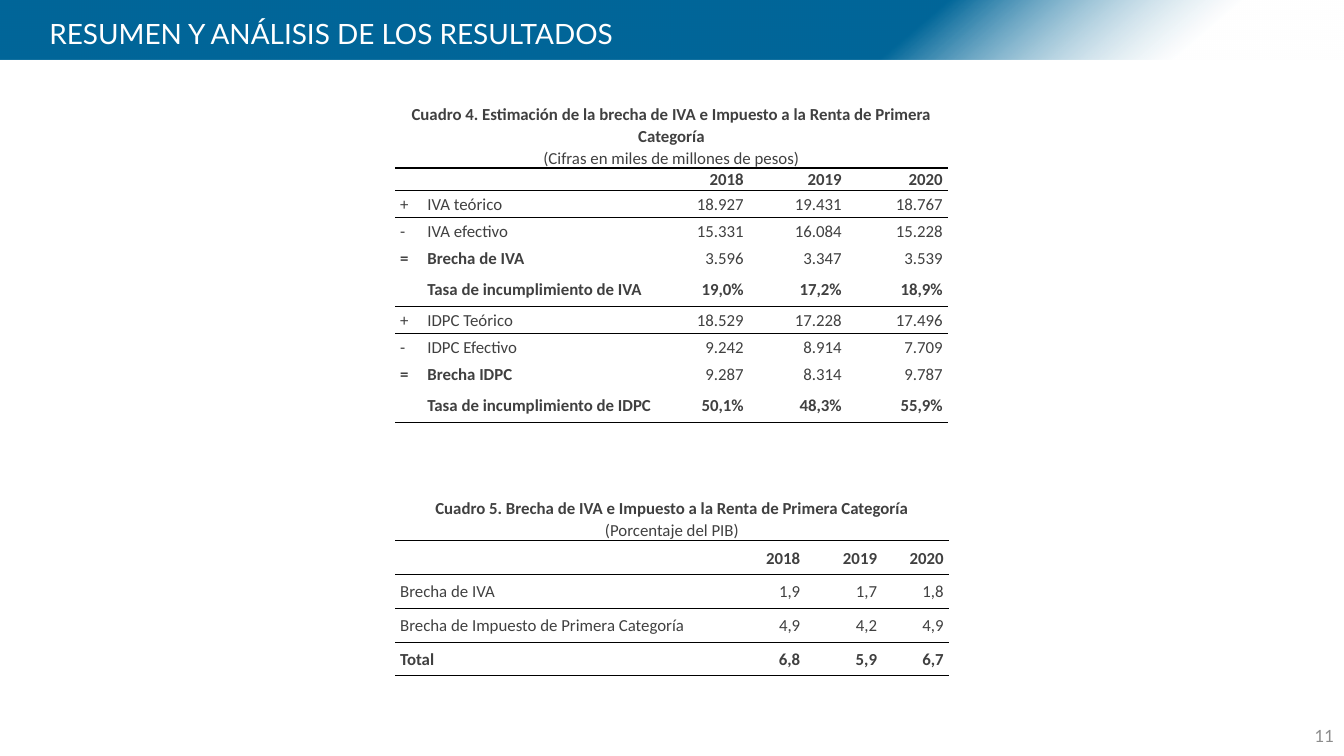
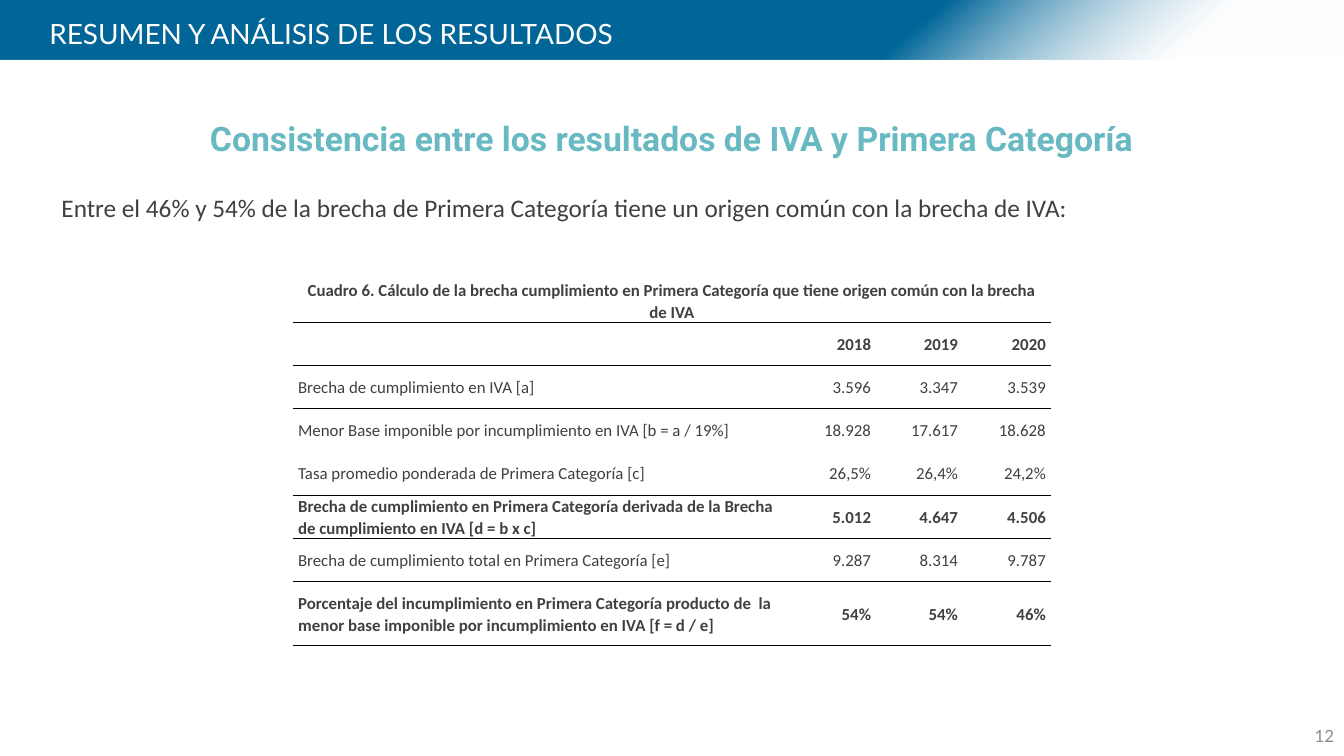
"""Build two slides of tax gap results with their tables."""
from pptx import Presentation
from pptx.dml.color import RGBColor
from pptx.enum.shapes import MSO_SHAPE as Preset
from pptx.enum.text import MSO_ANCHOR as Anchor, PP_ALIGN as Align
from pptx.oxml.ns import qn
from pptx.oxml.xmlchemy import OxmlElement
from pptx.util import Pt

PX = 9144
WIDTH, HEIGHT = 1330, 748
COLORS = {"band": "006699", "white": "FFFFFF", "text": "404040",
          "number": "8C8C8C", "heading": "68B9C1", "rule": "000000"}
FORMATS = {
    "title": {"name": "Lato", "size": Pt(19.9), "color": "white"},
    "number": {"name": "Lato", "size": Pt(12), "color": "number"},
    "heading": {"name": "Roboto", "size": Pt(24), "color": "heading", "bold": True},
    "body": {"name": "Calibri", "size": Pt(18), "color": "text"},
    "cell": {"name": "Calibri", "size": Pt(12), "color": "text", "bold": False},
    "strong": {"name": "Calibri", "size": Pt(12), "color": "text", "bold": True},
}
NO_GRID_STYLE = "{2D5ABB26-0587-4C30-8999-92F81FD0307C}"
TITLE = "RESUMEN Y ANÁLISIS DE LOS RESULTADOS"
YEARS = ["2018", "2019", "2020"]

GAP_TABLE = {
    "at": (391, 102),
    "columns": [27, 245, 78, 97, 100],
    "heights": [64, 22] + [27, 27, 27, 34] * 2,
    "caption": ["Cuadro 4. Estimación de la brecha de IVA e Impuesto a la Renta "
                "de Primera Categoría", "(Cifras en miles de millones de pesos)"],
    "anchor": Anchor.BOTTOM,
    "ruled": {0, 1, 5, 9},
    "rows": [
        ("strong", "strong", ["", "", *YEARS]),
        ("cell", "cell", ["+", "IVA teórico", "18.927", "19.431", "18.767"]),
        ("cell", "cell", ["-", "IVA efectivo", "15.331", "16.084", "15.228"]),
        ("strong", "cell", ["=", "Brecha de IVA", "3.596", "3.347", "3.539"]),
        ("strong", "strong", ["", "Tasa de incumplimiento de IVA", "19,0%", "17,2%", "18,9%"]),
        ("cell", "cell", ["+", "IDPC Teórico", "18.529", "17.228", "17.496"]),
        ("cell", "cell", ["-", "IDPC Efectivo", "9.242", "8.914", "7.709"]),
        ("strong", "cell", ["=", "Brecha IDPC", "9.287", "8.314", "9.787"]),
        ("strong", "strong", ["", "Tasa de incumplimiento de IDPC", "50,1%", "48,3%", "55,9%"]),
    ],
}
GDP_TABLE = {
    "at": (391, 492),
    "columns": [302, 104, 76, 66],
    "heights": [42, 34, 33, 34, 33],
    "caption": ["Cuadro 5. Brecha de IVA e Impuesto a la Renta de Primera Categoría",
                "(Porcentaje del PIB)"],
    "anchor": Anchor.BOTTOM,
    "ruled": {0, 1, 3, 4},
    "rows": [
        ("strong", "strong", ["", *YEARS]),
        ("cell", "cell", ["Brecha de IVA", "1,9", "1,7", "1,8"]),
        ("cell", "cell", ["Brecha de Impuesto de Primera Categoría", "4,9", "4,2", "4,9"]),
        ("strong", "strong", ["Total", "6,8", "5,9", "6,7"]),
    ],
}
ORIGIN_TABLE = {
    "at": (290, 276),
    "columns": [491, 86, 86, 87],
    "heights": [43, 43, 42, 43, 43, 42, 43, 63],
    "caption": ["Cuadro 6. Cálculo de la brecha cumplimiento en Primera Categoría "
                "que tiene origen común con la brecha de IVA"],
    "anchor": Anchor.TOP,
    "ruled": {0, 1, 4, 5, 6, 7},
    "rows": [
        ("strong", "strong", ["", *YEARS]),
        ("cell", "cell", ["Brecha de cumplimiento en IVA [a]", "3.596", "3.347", "3.539"]),
        ("cell", "cell", ["Menor Base imponible por incumplimiento en IVA [b = a / 19%]",
                          "18.928", "17.617", "18.628"]),
        ("cell", "cell", ["Tasa promedio ponderada de Primera Categoría [c]",
                          "26,5%", "26,4%", "24,2%"]),
        ("strong", "strong", ["Brecha de cumplimiento en Primera Categoría derivada de la "
                              "Brecha de cumplimiento en IVA [d = b x c]",
                              "5.012", "4.647", "4.506"]),
        ("cell", "cell", ["Brecha de cumplimiento total en Primera Categoría [e]",
                          "9.287", "8.314", "9.787"]),
        ("strong", "strong", ["Porcentaje del incumplimiento en Primera Categoría producto de  "
                              "la menor base imponible por incumplimiento en IVA [f = d / e]",
                              "54%", "54%", "46%"]),
    ],
}


def rgb(name):
    """Return the named colour."""
    return RGBColor.from_string(COLORS[name])


def px(*lengths):
    """Turn pixel lengths into EMU."""
    return [length * PX for length in lengths]


def add_run(paragraph, text, style):
    """Add a run in one of the shared text formats."""
    run = paragraph.add_run()
    run.text = text
    for attribute, value in FORMATS[style].items():
        if attribute == "color":
            run.font.color.rgb = rgb(value)
        else:
            setattr(run.font, attribute, value)


def add_text(slide, box, text, style, align=Align.LEFT, **frame_format):
    """Add a wrapped one-paragraph text box."""
    frame = slide.shapes.add_textbox(*px(*box)).text_frame
    frame.word_wrap = True
    for attribute, value in frame_format.items():
        setattr(frame, attribute, value)
    paragraph = frame.paragraphs[0]
    paragraph.alignment = align
    add_run(paragraph, text, style)
    return paragraph


def add_band(slide):
    """Add the top band that fades out to the right."""
    band = slide.shapes.add_shape(Preset.RECTANGLE, *px(0, 0, WIDTH, 59))
    band.shadow.inherit = False
    band.line.fill.background()
    band.fill.gradient()
    band.fill.gradient_angle = 310
    stops = band.fill.gradient_stops
    for stop, position, color in zip(stops, (0.67, 0.88), ("band", "white")):
        stop.position = position
        stop.color.rgb = rgb(color)
    alpha = OxmlElement("a:alpha")
    alpha.set("val", "42000")
    list(band._element.spPr.iter(qn("a:srgbClr")))[-1].append(alpha)


def add_page(presentation, number):
    """Add a slide with the shared band, title and number."""
    slide = presentation.slides.add_slide(presentation.slide_layouts[6])
    add_band(slide)
    add_text(slide, (39, 9, 1090, 47), TITLE, "title", vertical_anchor=Anchor.MIDDLE)
    add_text(slide, (1276, 708, 54, 40), str(number), "number", Align.RIGHT,
             vertical_anchor=Anchor.MIDDLE)
    return slide


def add_border(cell, side):
    """Draw a one-point rule on one side of a cell."""
    line = OxmlElement(side)
    line.set("w", str(Pt(1)))
    fill = OxmlElement("a:solidFill")
    color = OxmlElement("a:srgbClr")
    color.set("val", COLORS["rule"])
    fill.append(color)
    line.append(fill)
    cell._tc.get_or_add_tcPr().append(line)


def format_cell(cell, lines, styles, align, anchor):
    """Fill a cell with lines of text in the given styles."""
    cell_format = {"margin_left": 5 * PX, "margin_right": 5 * PX, "margin_top": 0,
                   "margin_bottom": 0, "vertical_anchor": anchor}
    for attribute, value in cell_format.items():
        setattr(cell, attribute, value)
    paragraph = cell.text_frame.paragraphs[0]
    paragraph.alignment = align
    paragraph.line_spacing = 1.07
    for index, (text, style) in enumerate(zip(lines, styles)):
        if index:
            paragraph.add_line_break()
        if text:
            add_run(paragraph, text, style)
        else:
            end = OxmlElement("a:endParaRPr")
            end.set("sz", "1200")
            paragraph._p.append(end)


def add_ruled_table(slide, content):
    """Add a captioned table with rules below chosen rows."""
    columns, heights = content["columns"], content["heights"]
    box = px(*content["at"], sum(columns), sum(heights))
    table = slide.shapes.add_table(len(heights), len(columns), *box).table
    table.first_row = table.horz_banding = False
    table._tbl.tblPr.find(qn("a:tableStyleId")).text = NO_GRID_STYLE
    for column, width in zip(table.columns, columns):
        column.width = width * PX
    for row, height in zip(table.rows, heights):
        row.height = height * PX

    caption = table.cell(0, 0)
    caption.merge(table.cell(0, len(columns) - 1))
    format_cell(caption, content["caption"], ["strong", "cell"], Align.CENTER, content["anchor"])
    first_value = len(columns) - len(YEARS)
    for row, (label_style, value_style, texts) in enumerate(content["rows"], 1):
        for column, text in enumerate(texts):
            is_value = column >= first_value
            format_cell(table.cell(row, column), [text],
                        [value_style if is_value else label_style],
                        Align.RIGHT if is_value else Align.LEFT, Anchor.MIDDLE)

    for row in range(len(heights)):
        for column in range(len(columns)):
            cell = table.cell(row, column)
            if row - 1 in content["ruled"]:
                add_border(cell, "a:lnT")
            if row in content["ruled"]:
                add_border(cell, "a:lnB")
            cell.fill.background()


def main():
    """Build and save the presentation."""
    presentation = Presentation()
    presentation.slide_width, presentation.slide_height = px(WIDTH, HEIGHT)

    results = add_page(presentation, 11)
    add_ruled_table(results, GAP_TABLE)
    add_ruled_table(results, GDP_TABLE)

    consistency = add_page(presentation, 12)
    add_text(consistency, (124, 112, 1081, 52),
             "Consistencia entre los resultados de IVA y Primera Categoría",
             "heading", Align.CENTER)
    body = add_text(consistency, (51, 189, 1224, 40),
                    "Entre el 46% y 54% de la brecha de Primera Categoría tiene un origen "
                    "común con la brecha de IVA:", "body")
    body.line_spacing = 0.9
    add_ruled_table(consistency, ORIGIN_TABLE)
    presentation.save("out.pptx")


if __name__ == "__main__":
    main()
